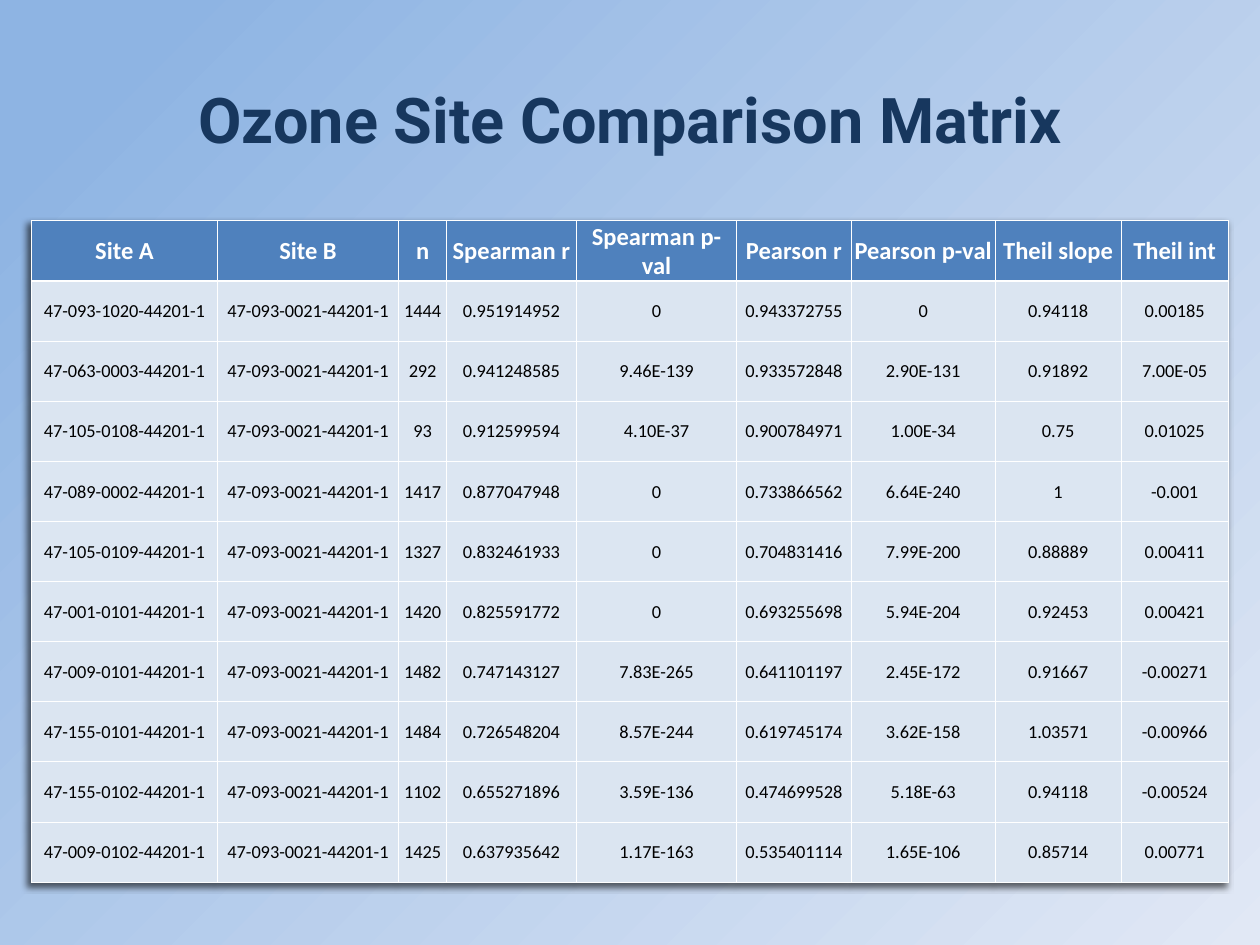
from lxml import etree
from pptx import Presentation
from pptx.dml.color import RGBColor
from pptx.enum.text import MSO_ANCHOR, PP_ALIGN
from pptx.oxml.ns import qn
from pptx.util import Cm, Pt

CENTER = PP_ALIGN.CENTER
MIDDLE = MSO_ANCHOR.MIDDLE

TITLE = "Ozone Site Comparison Matrix"
SITE_B = "47-093-0021-44201-1"
# Heading and width in cm
COLUMNS = [
    ("Site A", 3.74), ("Site B", 3.66), ("n", 0.96),
    ("Spearman r", 2.62), ("Spearman p-val", 3.23),
    ("Pearson r", 2.31), ("Pearson p-val", 2.9),
    ("Theil slope", 2.54), ("Theil int", 2.16),
]
# Site A, then the values that follow Site B
COMPARISONS = [
    ("47-093-1020-44201-1", "1444", "0.951914952", "0", "0.943372755", "0", "0.94118", "0.00185"),
    ("47-063-0003-44201-1", "292", "0.941248585", "9.46E-139", "0.933572848", "2.90E-131", "0.91892", "7.00E-05"),
    ("47-105-0108-44201-1", "93", "0.912599594", "4.10E-37", "0.900784971", "1.00E-34", "0.75", "0.01025"),
    ("47-089-0002-44201-1", "1417", "0.877047948", "0", "0.733866562", "6.64E-240", "1", "-0.001"),
    ("47-105-0109-44201-1", "1327", "0.832461933", "0", "0.704831416", "7.99E-200", "0.88889", "0.00411"),
    ("47-001-0101-44201-1", "1420", "0.825591772", "0", "0.693255698", "5.94E-204", "0.92453", "0.00421"),
    ("47-009-0101-44201-1", "1482", "0.747143127", "7.83E-265", "0.641101197", "2.45E-172", "0.91667", "-0.00271"),
    ("47-155-0101-44201-1", "1484", "0.726548204", "8.57E-244", "0.619745174", "3.62E-158", "1.03571", "-0.00966"),
    ("47-155-0102-44201-1", "1102", "0.655271896", "3.59E-136", "0.474699528", "5.18E-63", "0.94118", "-0.00524"),
    ("47-009-0102-44201-1", "1425", "0.637935642", "1.17E-163", "0.535401114", "1.65E-106", "0.85714", "0.00771"),
]
BACKGROUND_STOPS = [(0.08, "8EB4E3"), (1, "E1E8F5")]
HEADER_FILL = "4F81BD"
BODY_FILL, MIDDLE_FILL = "DBE5F1", "DCE6F2"
MIDDLE_ROWS = range(4, 7)
THIN, THICK = 0.5, 1.5


def color(value):
    return RGBColor.from_string(value)


def add_span(frame, text, font, size, shade, bold):
    """Write one centred run in the frame's first paragraph."""
    frame.vertical_anchor = MIDDLE
    para = frame.paragraphs[0]
    para.alignment = CENTER
    span = para.add_run()
    span.text = text
    span.font.name = font
    span.font.size = Pt(size)
    span.font.color.rgb = color(shade)
    span.font.bold = bold


def add_color(parent, value):
    return etree.SubElement(parent, qn("a:srgbClr"), val=value)


def set_borders(cell, top, bottom):
    """Draw white cell edges; call before the fill, which must come after them."""
    properties = cell._tc.get_or_add_tcPr()
    for side, width in (("L", THIN), ("R", THIN), ("T", top), ("B", bottom)):
        line = etree.SubElement(properties, qn("a:ln" + side), w=str(Pt(width)))
        add_color(etree.SubElement(line, qn("a:solidFill")), "FFFFFF")


def add_table_shadow(table):
    properties = table._tbl.tblPr
    effects = etree.Element(qn("a:effectLst"))
    properties.insert(0, effects)
    shadow = etree.SubElement(effects, qn("a:outerShdw"), blurRad=str(Pt(4)),
                              dist=str(Pt(3)), dir="8100000", algn="tr", rotWithShape="0")
    etree.SubElement(add_color(shadow, "000000"), qn("a:alpha"), val="60000")


def set_background(page):
    fill = page.background.fill
    fill.gradient()
    fill.gradient_angle = 315
    for stop, (position, shade) in zip(fill.gradient_stops, BACKGROUND_STOPS):
        stop.position = position
        stop.color.rgb = color(shade)


def add_title(page):
    box = page.shapes.add_textbox(0, Cm(0.76), Cm(25.4), Cm(3.25))
    box.text_frame.word_wrap = True
    add_span(box.text_frame, TITLE, "Roboto", 36, "17375E", True)


def add_matrix(page):
    rows = [[heading for heading, _ in COLUMNS]]
    rows += [(site, SITE_B, *values) for site, *values in COMPARISONS]
    table = page.shapes.add_table(len(rows), len(COLUMNS), Cm(0.64), Cm(4.45),
                                  Cm(24.12), Cm(13.34)).table
    table.horz_banding = False
    add_table_shadow(table)
    for column, (_, width) in zip(table.columns, COLUMNS):
        column.width = Cm(width)

    for r, texts in enumerate(rows):
        header = r == 0
        body_fill = MIDDLE_FILL if r in MIDDLE_ROWS else BODY_FILL
        for c, text in enumerate(texts):
            cell = table.cell(r, c)
            cell.margin_left = cell.margin_right = cell.margin_top = Cm(0.02)
            cell.margin_bottom = 0
            set_borders(cell, THICK if r == 1 else THIN, THICK if header else THIN)
            cell.fill.solid()
            cell.fill.fore_color.rgb = color(HEADER_FILL if header else body_fill)
            cell.vertical_anchor = MIDDLE
            add_span(cell.text_frame, text, "Calibri", 14 if header else 10.5,
                     "FFFFFF" if header else "000000", header)


def main():
    deck = Presentation()
    deck.slide_width, deck.slide_height = Cm(25.4), Cm(19.05)
    page = deck.slides.add_slide(deck.slide_layouts[6])
    set_background(page)
    add_title(page)
    add_matrix(page)
    deck.save("out.pptx")


if __name__ == "__main__":
    main()
